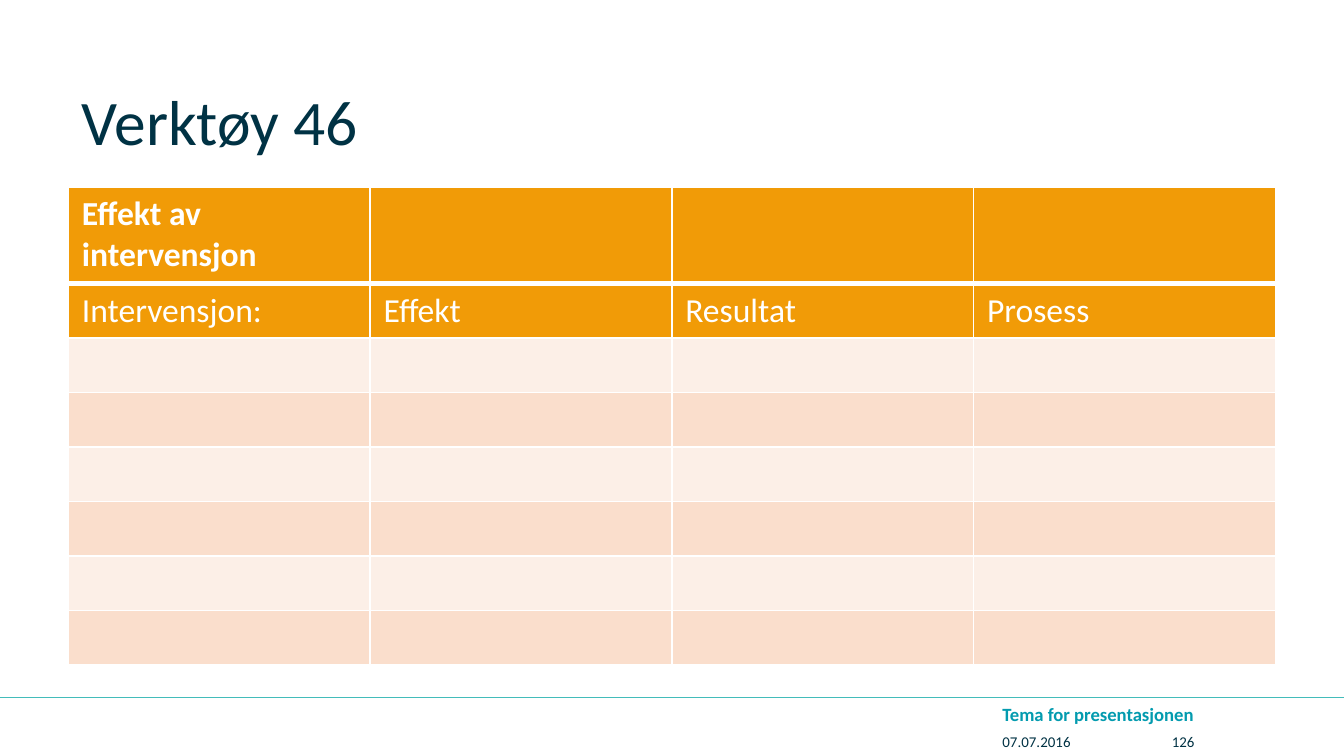
from lxml.etree import SubElement
from pptx import Presentation
from pptx.dml.color import RGBColor
from pptx.enum.shapes import MSO_CONNECTOR
from pptx.enum.text import MSO_ANCHOR
from pptx.oxml.ns import qn
from pptx.util import Inches, Pt

FONT = "Calibri"
NAVY = RGBColor(0x00, 0x32, 0x44)
TEAL = RGBColor(0x03, 0x9B, 0xAF)
RULE_TEAL = RGBColor(0x43, 0xBC, 0xBA)
WHITE = RGBColor(0xFF, 0xFF, 0xFF)
ORANGE = RGBColor(0xF1, 0x9B, 0x07)
LIGHT_PEACH = RGBColor(0xFC, 0xEF, 0xE7)
PEACH = RGBColor(0xFA, 0xDE, 0xCC)

HEADINGS = [
    ["Effekt av intervensjon", "", "", ""],
    ["Intervensjon:", "Effekt", "Resultat", "Prosess"],
]
EMPTY_ROWS = 6


def format_text(text_frame, size, color, bold=False):
    """Apply one font style to every run in a text frame."""
    for paragraph in text_frame.paragraphs:
        for run in paragraph.runs:
            run.font.name = FONT
            run.font.size = Pt(size)
            run.font.bold = bold
            run.font.color.rgb = color


def add_text(slide, box, text, size, color, bold=False,
             anchor=MSO_ANCHOR.MIDDLE, padding=0.0):
    """Add a text box with the given vertical padding."""
    shape = slide.shapes.add_textbox(*map(Inches, box))
    text_frame = shape.text_frame
    text_frame.word_wrap = True
    text_frame.vertical_anchor = anchor
    text_frame.margin_top = text_frame.margin_bottom = Inches(padding)
    text_frame.text = text
    format_text(text_frame, size, color, bold)


def set_borders(cell, bottom_width):
    """Draw white borders around a cell."""
    properties = cell._tc.get_or_add_tcPr()
    widths = {"a:lnL": 1, "a:lnR": 1, "a:lnT": 1, "a:lnB": bottom_width}
    for tag, width in widths.items():
        border = SubElement(properties, qn(tag), w=str(Pt(width)))
        fill = SubElement(border, qn("a:solidFill"))
        SubElement(fill, qn("a:srgbClr"), val=str(WHITE))


def add_effect_table(slide, left, top, width, height, header_height=0.72):
    """Add the table with two heading rows and banded empty rows."""
    row_count = len(HEADINGS) + EMPTY_ROWS
    column_count = len(HEADINGS[0])
    frame = slide.shapes.add_table(
        row_count, column_count,
        Inches(left), Inches(top), Inches(width), Inches(height))
    table = frame.table
    row_height = (height - header_height) / (row_count - 1)
    for row_index, row in enumerate(table.rows):
        row.height = Inches(row_height if row_index else header_height)
        is_heading = row_index < len(HEADINGS)
        band = PEACH if row_index % 2 else LIGHT_PEACH
        for column_index, cell in enumerate(row.cells):
            set_borders(cell, 1 if row_index else 3)
            cell.fill.solid()
            cell.fill.fore_color.rgb = ORANGE if is_heading else band
            if is_heading:
                cell.text_frame.text = HEADINGS[row_index][column_index]
                format_text(cell.text_frame, 18, WHITE, row_index == 0)


def add_footer(slide, left, top, width):
    """Add the footer rule with theme, date and page number."""
    line = slide.shapes.add_connector(
        MSO_CONNECTOR.STRAIGHT, Inches(left), Inches(top),
        Inches(left + width), Inches(top))
    line.line.color.rgb = RULE_TEAL
    line.line.width = Pt(1)
    SubElement(line._element.spPr, qn("a:effectLst"))
    text_left = left + 7.36
    add_text(slide, (text_left, top + 0.03, 2.36, 0.18),
             "Tema for presentasjonen", 10, TEAL, True)
    add_text(slide, (text_left, top + 0.27, 1.18, 0.12), "07.07.2016", 8, NAVY)
    add_text(slide, (text_left + 1.26, top + 0.27, 0.71, 0.12), "126", 8, NAVY)


def main():
    """Build and save the presentation."""
    presentation = Presentation()
    presentation.slide_width = Inches(10)
    presentation.slide_height = Inches(10 * 9 / 16)
    slide = presentation.slides.add_slide(presentation.slide_layouts[6])
    add_footer(slide, 0, 5.19, 10)
    add_text(slide, (0.51, 0.55, 8.98, 0.68), "Verktøy 46", 34, NAVY,
             anchor=MSO_ANCHOR.BOTTOM, padding=0.05)
    add_effect_table(slide, 0.51, 1.39, 8.98, 3.56)
    presentation.save("out.pptx")


if __name__ == "__main__":
    main()
